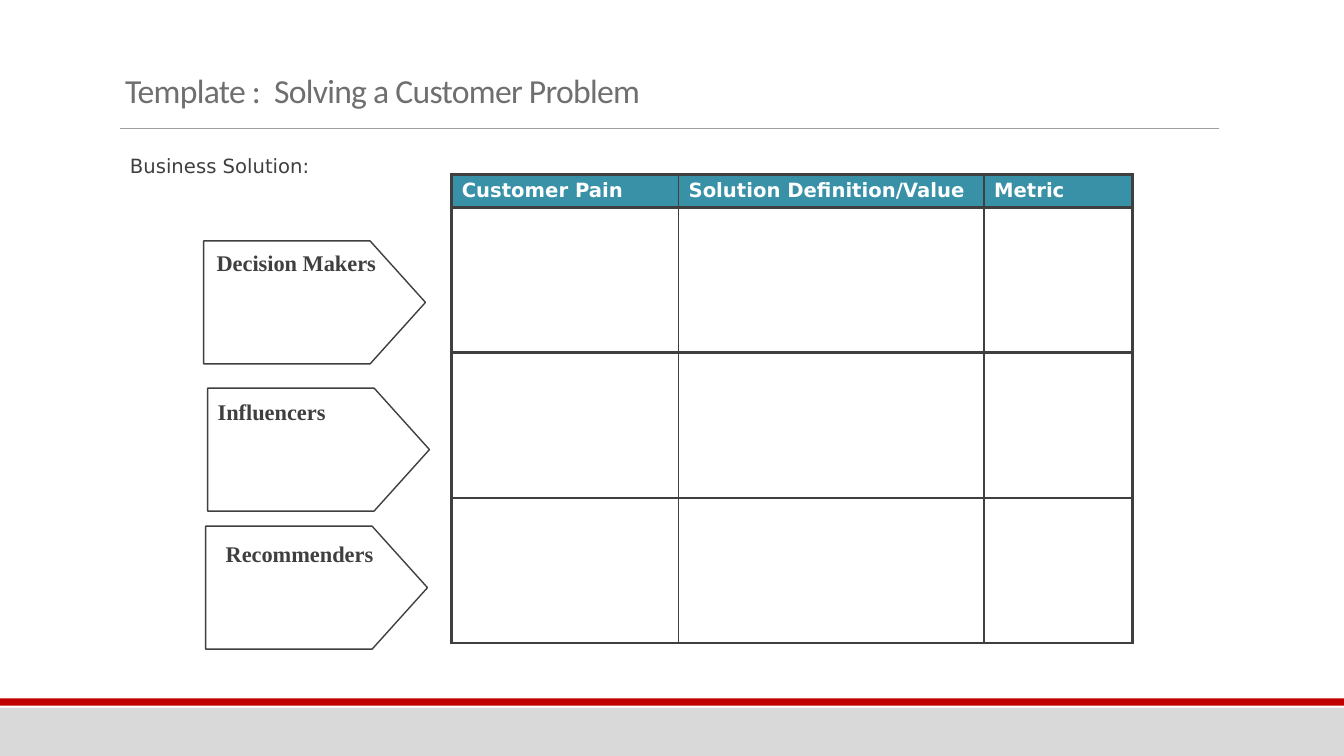
"""Build the customer problem template slide."""
from dataclasses import dataclass

import lxml.etree
import pptx
import pptx.dml.color
import pptx.enum.shapes
import pptx.enum.text
import pptx.oxml.ns
import pptx.util

Inches = pptx.util.Inches
Pt = pptx.util.Pt
qn = pptx.oxml.ns.qn
Kind = pptx.enum.shapes.MSO_SHAPE
Anchor = pptx.enum.text.MSO_ANCHOR

COLORS = {"ink": "3F3F3F", "title": "6F6F6F", "rule": "9F9F9F", "head": "3891A7",
          "white": "FFFFFF", "grey": "D9D9D9", "red": "C00000"}
HEADS = ["Customer Pain", "Solution Definition/Value", "Metric"]
WIDTHS = [2.25, 3.03, 1.47]
HEIGHTS = [0.33, 1.44, 1.44, 1.44]
THICK, THIN = 2.25, 1


@dataclass
class Band:
    top: float
    height: float
    color: str


@dataclass
class Label:
    text: str
    left: float
    top: float
    width: float
    height: float
    font: str
    size: float
    bold: bool


@dataclass
class Arrow:
    left: float
    top: float
    label: Label


def role(text: str, left: float, top: float) -> Label:
    return Label(text, left, top, 2.1, 0.37, "Times New Roman", 16, True)


BANDS = [Band(7.02, 0.48, "grey"), Band(6.93, 0.07, "red")]
ARROWS = [
    Arrow(2.02, 2.39, role("Decision Makers", 2.05, 2.42)),
    Arrow(2.06, 3.85, role("Influencers", 2.06, 3.9)),
    Arrow(2.04, 5.22, role("Recommenders", 2.14, 5.31)),
]
TOPIC = Label("Business Solution:", 1.19, 1.48, 2.69, 0.34, "DejaVu Sans", 14, False)


def rgb(name: str) -> pptx.dml.color.RGBColor:
    return pptx.dml.color.RGBColor.from_string(COLORS[name])


def style(para, font: str, size: float, color: str, bold: bool = False) -> None:
    para.font.name = font
    para.font.size = Pt(size)
    para.font.bold = bold
    para.font.color.rgb = rgb(color)


def add_band(slide, band: Band) -> None:
    shape = slide.shapes.add_shape(Kind.RECTANGLE, 0, Inches(band.top),
                                   Inches(13.33), Inches(band.height))
    shape.shadow.inherit = False
    shape.fill.solid()
    shape.fill.fore_color.rgb = rgb(band.color)
    shape.line.fill.background()


def add_rule(slide) -> None:
    line = slide.shapes.add_connector(pptx.enum.shapes.MSO_CONNECTOR.STRAIGHT, Inches(1.19),
                                      Inches(1.27), Inches(12.09), Inches(1.27))
    line.line.color.rgb = rgb("rule")
    line.line.width = Pt(0.5)
    lxml.etree.SubElement(line._element.spPr, qn("a:effectLst"))


def set_title(slide) -> None:
    title = slide.shapes.title
    title.left, title.top = Inches(1.14), Inches(0.47)
    title.width, title.height = Inches(11), Inches(0.68)
    frame = title.text_frame
    frame.text = "Template :  Solving a Customer Problem"
    frame.auto_size = pptx.enum.text.MSO_AUTO_SIZE.NONE
    frame.vertical_anchor = Anchor.BOTTOM
    para = frame.paragraphs[0]
    para.alignment = pptx.enum.text.PP_ALIGN.LEFT
    para.line_spacing = 0.85
    style(para, "Calibri", 24, "title")
    para.runs[0]._r.get_or_add_rPr().set("spc", "-50")


def add_label(slide, label: Label) -> None:
    box = slide.shapes.add_textbox(Inches(label.left), Inches(label.top),
                                   Inches(label.width), Inches(label.height))
    frame = box.text_frame
    frame.word_wrap = True
    frame.text = label.text
    style(frame.paragraphs[0], label.font, label.size, "ink", label.bold)


def add_arrow(slide, arrow: Arrow) -> None:
    shape = slide.shapes.add_shape(Kind.PENTAGON, Inches(arrow.left), Inches(arrow.top),
                                   Inches(2.2), Inches(1.22))
    shape.adjustments[0] = 0.45
    shape.shadow.inherit = False
    shape.fill.background()
    shape.line.color.rgb = rgb("ink")
    shape.line.width = Pt(THIN)


def set_edges(cell, left: float, right: float) -> None:
    props = cell._tc.get_or_add_tcPr()
    sides = {"L": left, "R": right, "T": THICK, "B": THICK}
    for place, (side, width) in enumerate(sides.items()):
        edge = lxml.etree.Element(qn(f"a:ln{side}"), w=str(int(Pt(width))))
        fill = lxml.etree.SubElement(edge, qn("a:solidFill"))
        lxml.etree.SubElement(fill, qn("a:srgbClr"), val=COLORS["ink"])
        props.insert(place, edge)


def add_grid(slide) -> None:
    table = slide.shapes.add_table(len(HEIGHTS), len(WIDTHS), Inches(4.48), Inches(1.73),
                                   Inches(sum(WIDTHS)), Inches(sum(HEIGHTS))).table
    table.first_row = table.horz_banding = False
    for col, width in zip(table.columns, WIDTHS):
        col.width = Inches(width)
    last = len(WIDTHS) - 1
    for row, height in zip(table.rows, HEIGHTS):
        row.height = Inches(height)
        for spot, cell in enumerate(row.cells):
            cell.fill.background()
            set_edges(cell, THIN if spot else THICK, THICK if spot == last else THIN)
    for cell, head in zip(table.rows[0].cells, HEADS):
        cell.fill.solid()
        cell.fill.fore_color.rgb = rgb("head")
        cell.vertical_anchor = Anchor.MIDDLE
        cell.text = head
        style(cell.text_frame.paragraphs[0], "DejaVu Sans", 14, "white", True)


def main() -> None:
    deck = pptx.Presentation()
    deck.slide_width, deck.slide_height = Inches(13.33), Inches(7.5)
    slide = deck.slides.add_slide(deck.slide_layouts[5])
    for band in BANDS:
        add_band(slide, band)
    add_rule(slide)
    set_title(slide)
    for arrow in ARROWS:
        add_arrow(slide, arrow)
    add_grid(slide)
    for label in [arrow.label for arrow in ARROWS] + [TOPIC]:
        add_label(slide, label)
    deck.save("out.pptx")


if __name__ == "__main__":
    main()
